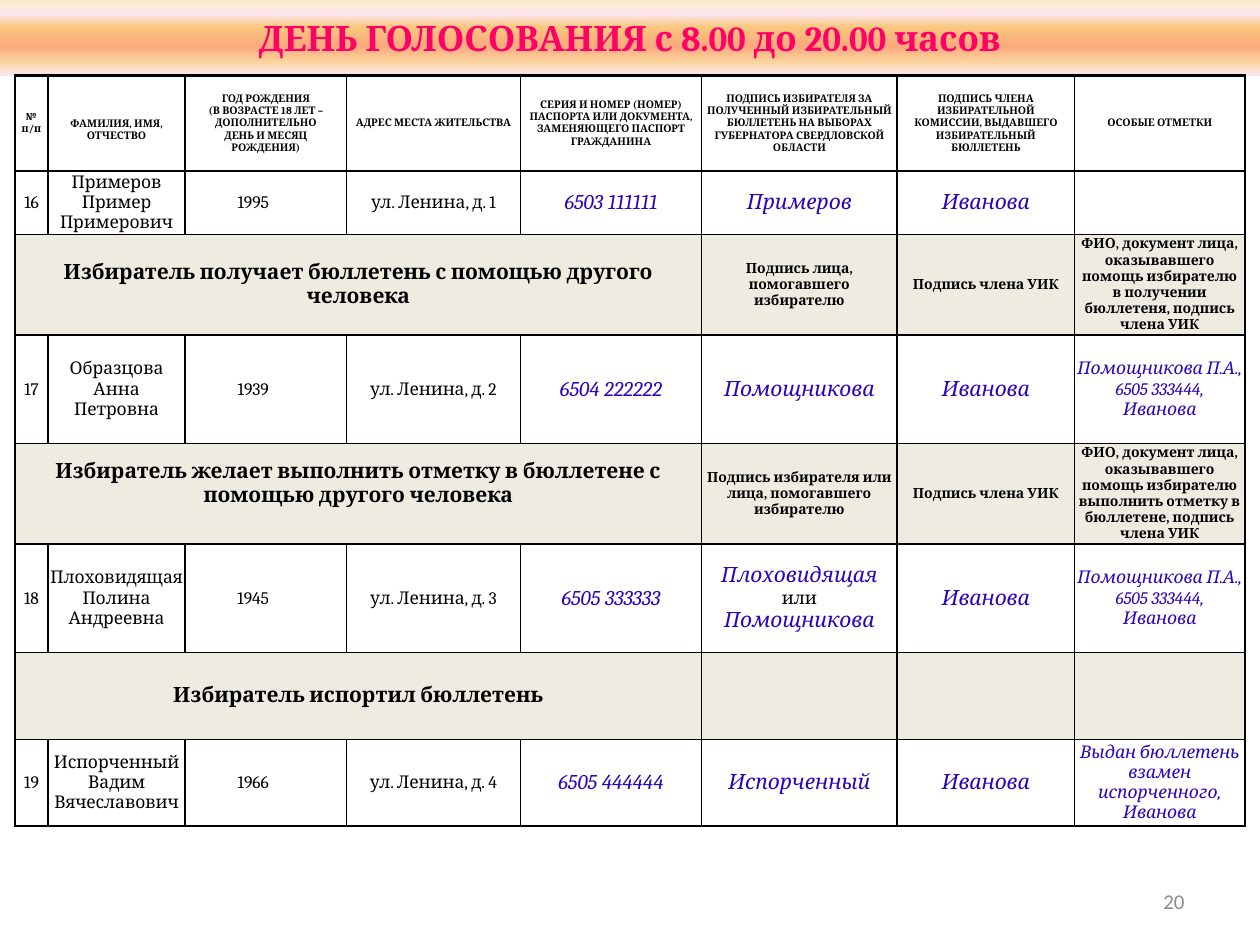
from lxml import etree
from pptx import Presentation
from pptx.dml.color import RGBColor
from pptx.enum.shapes import MSO_SHAPE
from pptx.enum.text import MSO_ANCHOR, PP_ALIGN
from pptx.oxml import parse_xml
from pptx.oxml.ns import nsdecls, qn
from pptx.util import Inches, Pt

RECTANGLE = MSO_SHAPE.RECTANGLE
MIDDLE = MSO_ANCHOR.MIDDLE
CENTER, RIGHT = PP_ALIGN.CENTER, PP_ALIGN.RIGHT

BLACK = RGBColor(0x00, 0x00, 0x00)
INK = RGBColor(0x29, 0x07, 0xB9)
PINK = RGBColor(0xFF, 0x00, 0x66)
GRAY = RGBColor(0x8C, 0x8C, 0x8C)
BEIGE = RGBColor(0xEE, 0xEC, 0xE1)
TITLE_STOPS = [
    (0, RGBColor(0xFB, 0xEA, 0xC7)), (18, RGBColor(0xFE, 0xE7, 0xF2)),
    (36, RGBColor(0xFA, 0xC7, 0x7D)), (61, RGBColor(0xFB, 0xA9, 0x7D)),
    (82, RGBColor(0xFB, 0xD4, 0x9C)), (100, RGBColor(0xFE, 0xE7, 0xF2)),
]

# style: size, colour, bold, italic
HEAD = (6, BLACK, True, False)
PLAIN = (10, BLACK, False, False)
SIGNED = (12, INK, False, True)
REMARK = (10, INK, False, True)
SECTION = (12, BLACK, True, False)
HINT = (8, BLACK, True, False)

TITLE = "ДЕНЬ ГОЛОСОВАНИЯ с 8.00 до 20.00 часов"
PAGE_NUMBER = "20"
HEADERS = [
    "№\nп/п",
    "ФАМИЛИЯ, ИМЯ, ОТЧЕСТВО",
    "ГОД РОЖДЕНИЯ\n(В ВОЗРАСТЕ 18 ЛЕТ –\nДОПОЛНИТЕЛЬНО\nДЕНЬ И МЕСЯЦ\nРОЖДЕНИЯ)",
    "АДРЕС МЕСТА ЖИТЕЛЬСТВА",
    "СЕРИЯ И НОМЕР (НОМЕР) ПАСПОРТА ИЛИ ДОКУМЕНТА, ЗАМЕНЯЮЩЕГО ПАСПОРТ ГРАЖДАНИНА",
    "ПОДПИСЬ ИЗБИРАТЕЛЯ ЗА ПОЛУЧЕННЫЙ ИЗБИРАТЕЛЬНЫЙ БЮЛЛЕТЕНЬ НА ВЫБОРАХ "
    "ГУБЕРНАТОРА СВЕРДЛОВСКОЙ ОБЛАСТИ",
    "ПОДПИСЬ ЧЛЕНА\nИЗБИРАТЕЛЬНОЙ\nКОМИССИИ, ВЫДАВШЕГО\nИЗБИРАТЕЛЬНЫЙ\nБЮЛЛЕТЕНЬ",
    "ОСОБЫЕ ОТМЕТКИ",
]
HELPER_REMARK = "Помощникова П.А., 6505 333444,\nИванова"
# Voter rows have eight entries; section rows have four, the first spanning five columns
ROWS = [
    ["16", "Примеров Пример Примерович", "1995", "ул. Ленина, д. 1",
     "6503 111111", "Примеров", "Иванова", ""],
    ["Избиратель получает бюллетень с помощью другого человека",
     "Подпись лица, помогавшего избирателю", "Подпись члена УИК",
     "ФИО, документ лица, оказывавшего помощь избирателю в получении "
     "бюллетеня, подпись члена УИК"],
    ["17", "Образцова Анна Петровна", "1939", "ул. Ленина, д. 2",
     "6504 222222", "Помощникова", "Иванова", HELPER_REMARK],
    ["Избиратель желает выполнить отметку в бюллетене с помощью другого человека",
     "Подпись избирателя или лица, помогавшего избирателю", "Подпись члена УИК",
     "ФИО, документ лица, оказывавшего помощь избирателю выполнить отметку в "
     "бюллетене, подпись члена УИК"],
    ["18", "Плоховидящая Полина Андреевна", "1945", "ул. Ленина, д. 3",
     "6505 333333", "Плоховидящая\nили\nПомощникова", "Иванова", HELPER_REMARK],
    ["Избиратель испортил бюллетень", "", "", ""],
    ["19", "Испорченный Вадим Вячеславович", "1966", "ул. Ленина, д. 4",
     "6505 444444", "Испорченный", "Иванова",
     "Выдан бюллетень взамен испорченного, Иванова"],
]
VOTER_STYLES = [PLAIN] * 4 + [SIGNED] * 3 + [REMARK]
SECTION_STYLES = [SECTION] + [HINT] * 3
COLUMN_WIDTHS = [0.26, 1.09, 1.28, 1.38, 1.44, 1.55, 1.41, 1.35]
ROW_HEIGHTS = [0.76, 0.46, 0.69, 0.86, 0.71, 0.86, 0.69, 0.69]
SPAN = 5
YEAR_COLUMN = 2
LAST_COLUMN, LAST_ROW = len(COLUMN_WIDTHS) - 1, len(ROWS)


def write(frame, text, style, font="Cambria", align=CENTER):
    """Write each line of text as its own paragraph."""
    for index, line in enumerate(text.split("\n")):
        paragraph = frame.add_paragraph() if index else frame.paragraphs[0]
        paragraph.alignment = align
        run = paragraph.add_run()
        run.text = line
        size, color, bold, italic = PLAIN if line == "или" else style
        run.font.name, run.font.size = font, Pt(size)
        run.font.bold, run.font.italic = bold, italic
        run.font.color.rgb = color


def set_borders(cell, row, column):
    """Thick lines round the table and below the header, thin ones elsewhere."""
    thick = {"L": column == 0, "R": column == LAST_COLUMN,
             "T": row <= 1, "B": row in (0, LAST_ROW)}
    properties = cell._tc.get_or_add_tcPr()
    for index, (side, is_thick) in enumerate(thick.items()):
        line = etree.Element(qn("a:ln" + side), w=str(Pt(1.5 if is_thick else 1)))
        fill = etree.SubElement(line, qn("a:solidFill"))
        etree.SubElement(fill, qn("a:srgbClr"), val=str(BLACK))
        properties.insert(index, line)


def add_title(slide):
    banner = slide.shapes.add_shape(RECTANGLE, 0, 0, Inches(10), Inches(0.6))
    banner.shadow.inherit = False
    banner.line.fill.background()
    banner.fill.gradient()
    gradient = banner._element.spPr.find(qn("a:gradFill"))
    stops = "".join(f'<a:gs pos="{position * 1000}"><a:srgbClr val="{color}"/></a:gs>'
                    for position, color in TITLE_STOPS)
    gradient.getparent().replace(gradient, parse_xml(
        f'<a:gradFill {nsdecls("a")}><a:gsLst>{stops}</a:gsLst>'
        '<a:lin ang="5400000" scaled="0"/></a:gradFill>'))
    banner.text_frame.vertical_anchor = MIDDLE
    write(banner.text_frame, TITLE, (20, PINK, True, False))


def add_register(slide):
    table = slide.shapes.add_table(
        len(ROW_HEIGHTS), len(COLUMN_WIDTHS), Inches(0.12), Inches(0.6),
        Inches(sum(COLUMN_WIDTHS)), Inches(sum(ROW_HEIGHTS))).table
    table.first_row = table.horz_banding = False
    for column, width in zip(table.columns, COLUMN_WIDTHS):
        column.width = Inches(width)

    for row, entries in enumerate([HEADERS] + ROWS):
        table.rows[row].height = Inches(ROW_HEIGHTS[row])
        is_section = len(entries) < len(HEADERS)
        for column in range(len(HEADERS)):
            cell = table.cell(row, column)
            cell.vertical_anchor = MIDDLE
            cell.margin_left = cell.margin_right = Inches(0.02)
            cell.margin_top = cell.margin_bottom = 0
            if is_section:
                cell.fill.solid()
                cell.fill.fore_color.rgb = BEIGE
            else:
                cell.fill.background()
            set_borders(cell, row, column)

        if is_section:
            table.cell(row, 0).merge(table.cell(row, SPAN - 1))
            columns, styles = [0, *range(SPAN, len(HEADERS))], SECTION_STYLES
        else:
            columns = range(len(HEADERS))
            styles = VOTER_STYLES if row else [HEAD] * len(HEADERS)
        for column, text, style in zip(columns, entries, styles):
            if text:
                write(table.cell(row, column).text_frame, text, style)
        if row and not is_section:
            table.cell(row, YEAR_COLUMN).margin_right = Inches(0.22)

    table.cell(0, 1).margin_top = Inches(0.1)
    table.cell(4, 0).margin_bottom = Inches(0.16)


def add_page_number(slide):
    box = slide.shapes.add_textbox(Inches(7.17), Inches(6.95), Inches(2.33), Inches(0.4))
    box.text_frame.word_wrap = True
    box.text_frame.vertical_anchor = MIDDLE
    write(box.text_frame, PAGE_NUMBER, (12, GRAY, False, False), "Calibri", RIGHT)


def main():
    presentation = Presentation()
    presentation.slide_width, presentation.slide_height = Inches(10), Inches(7.5)
    slide = presentation.slides.add_slide(presentation.slide_layouts[6])
    add_title(slide)
    add_page_number(slide)
    add_register(slide)
    presentation.save("out.pptx")


if __name__ == "__main__":
    main()
